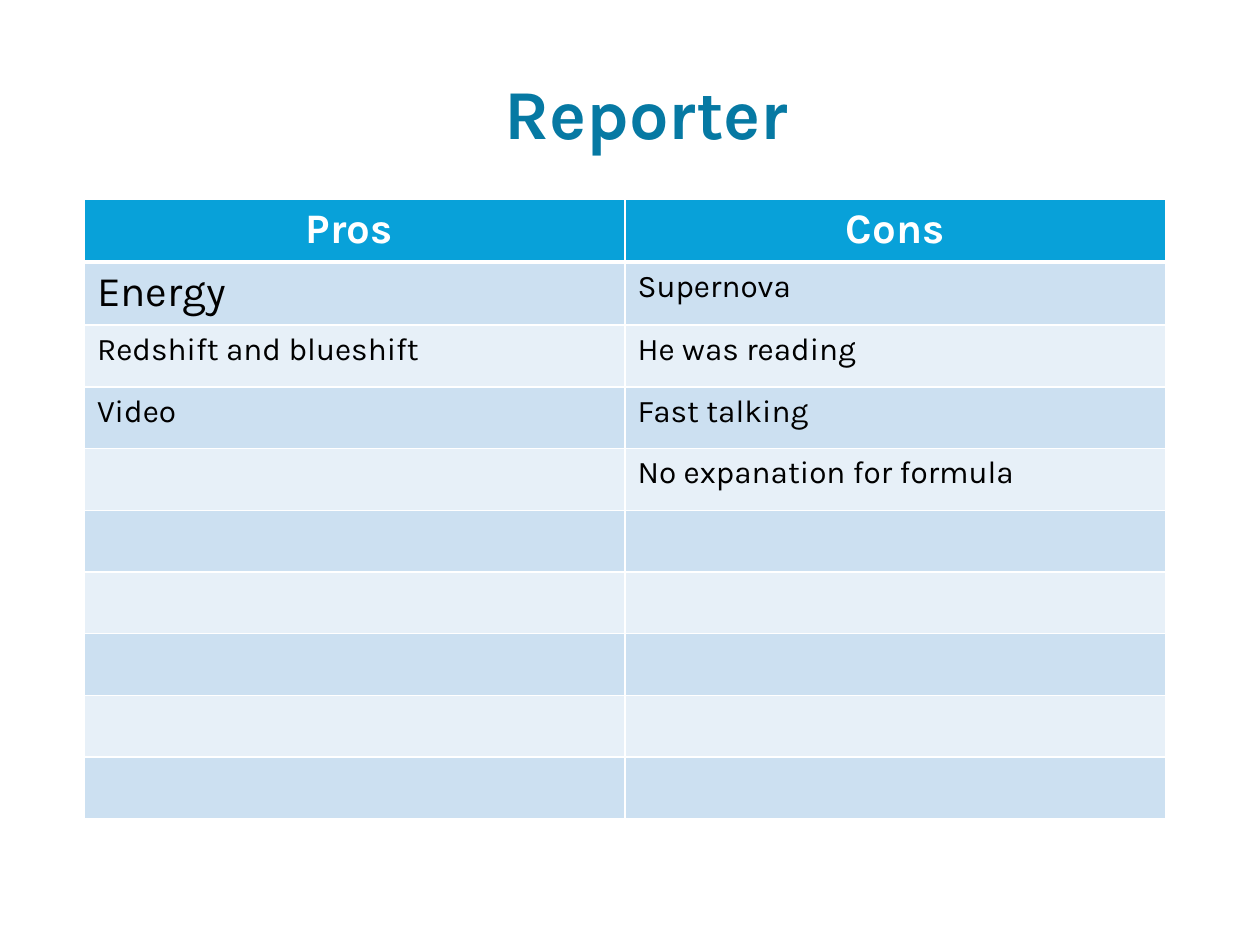
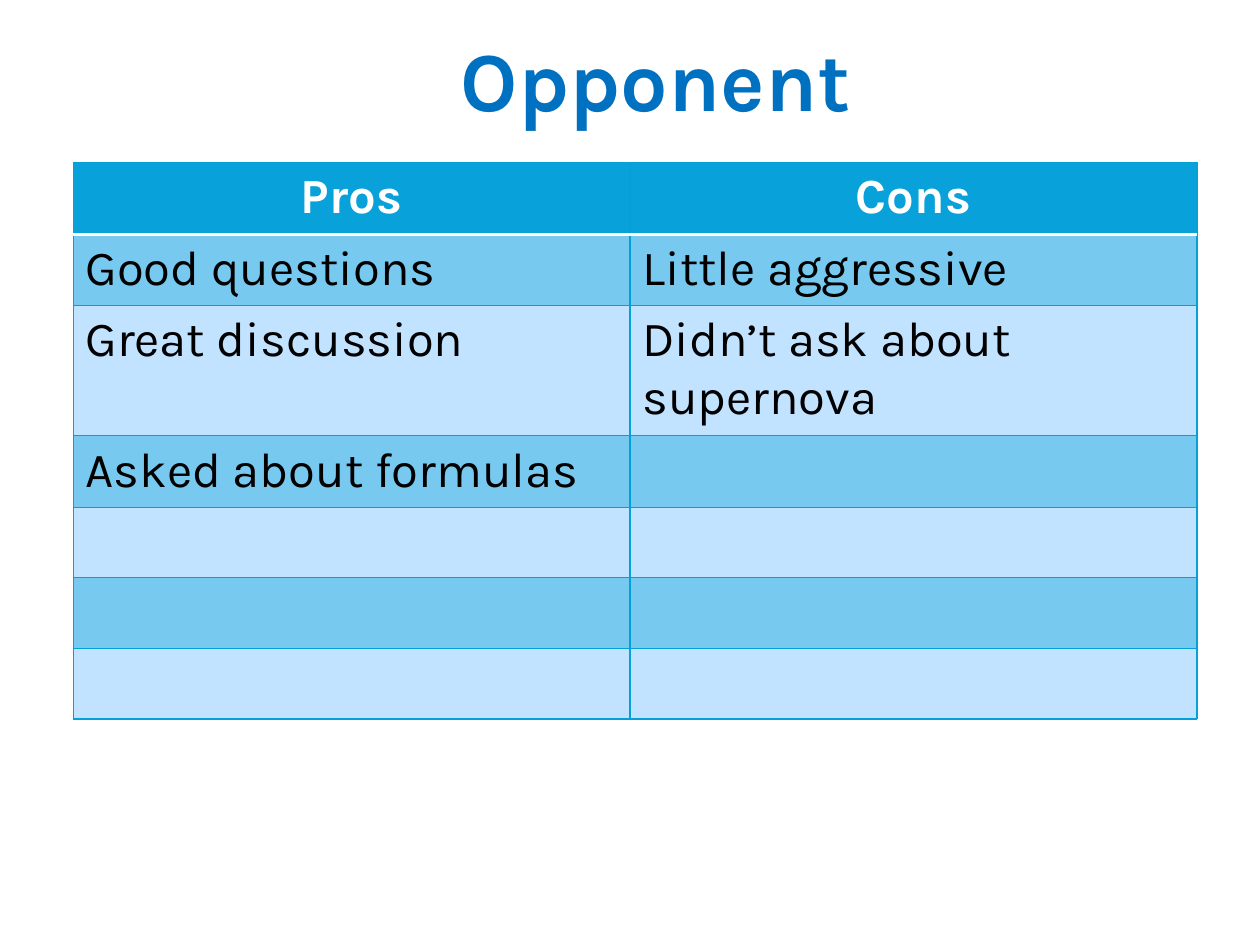
from lxml import etree
from pptx import Presentation
from pptx.dml.color import RGBColor
from pptx.enum.text import MSO_ANCHOR, PP_ALIGN
from pptx.oxml.ns import qn
from pptx.util import Inches, Pt

CENTER = PP_ALIGN.CENTER
LEFT = PP_ALIGN.LEFT
TOP = MSO_ANCHOR.TOP
FONT = "Karla"
COLORS = {
    "white": "FFFFFF", "black": "000000", "head": "08A1D9",
    "teal": "0679A3", "blue": "0070C0", "edge": "03A0D9",
    "mist": "CCE0F1", "ice": "E7F0F8",
    "sky": "78C9F0", "pale": "C1E3FF",
}


def paint(name):
    return RGBColor.from_string(COLORS[name])


def write(frame, text, size, color, bold=False, align=LEFT):
    para = frame.paragraphs[0]
    para.alignment = align
    run = para.add_run()
    run.text = text
    look = {"name": FONT, "size": Pt(size), "bold": bold}
    for key, value in look.items():
        setattr(run.font, key, value)
    run.font.color.rgb = paint(color)


def add_title(slide, text, box, size, color):
    frame = slide.shapes.add_textbox(*map(Inches, box)).text_frame
    frame.word_wrap = True
    frame.vertical_anchor = TOP
    write(frame, text, size, color, True, CENTER)


def add_edge(cell, side, color, width):
    line = etree.Element(qn(f"a:ln{side}"), w=str(Pt(width)))
    fill = etree.SubElement(line, qn("a:solidFill"))
    etree.SubElement(fill, qn("a:srgbClr"), val=COLORS[color])
    return line


def set_edges(cell, row, edge, rule):
    props = cell._tc.get_or_add_tcPr()
    sides = {"L": edge, "R": edge, "T": edge, "B": edge}
    if row == 0:
        sides["B"] = rule
    elif row == 1:
        sides["T"] = rule
    for spot, (side, style) in enumerate(sides.items()):
        props.insert(spot, add_edge(cell, side, *style))


def add_grid(slide, spot, widths, height, count, rows, size, bands, edge, rule):
    left, top = spot
    shape = slide.shapes.add_table(
        count, len(widths), Inches(left), Inches(top),
        Inches(sum(widths)), Inches(height * count))
    table = shape.table
    for col, width in zip(table.columns, widths):
        col.width = Inches(width)
    for row in table.rows:
        row.height = Inches(height)
    for r in range(count):
        for c in range(len(widths)):
            cell = table.cell(r, c)
            cell.fill.solid()
            cell.fill.fore_color.rgb = paint(bands[(r - 1) % 2] if r else "head")
            set_edges(cell, r, edge, rule)
            text, points = rows.get((r, c), ("", size))
            if not text:
                continue
            if r == 0:
                write(cell.text_frame, text, points, "white", True, CENTER)
            else:
                write(cell.text_frame, text, points, "black")


def fill_rows(pros, cons, head, size):
    rows = {}
    for c, items in enumerate((pros, cons)):
        for r, text in enumerate(items):
            rows[r, c] = (text, size if r else head)
    return rows


def main():
    deck = Presentation()
    deck.slide_width, deck.slide_height = Inches(10), Inches(7.5)
    blank = deck.slide_layouts[6]

    slide = deck.slides.add_slide(blank)
    add_title(slide, "Reporter", (1.42, 0.5, 7.42, 0.77), 40, "teal")
    rows = fill_rows(
        ["Pros ", "Energy", "Redshift and blueshift", "Video"],
        ["Cons", "Supernova", "He was reading", "Fast talking",
         "No expanation for formula"], 24, 18)
    rows[1, 0] = ("Energy", 24)
    add_grid(slide, (0.67, 1.58), (4.29, 4.29), 0.49, 10, rows, 18,
             ("mist", "ice"), ("white", 1), ("white", 3))

    slide = deck.slides.add_slide(blank)
    add_title(slide, "Opponent", (1.58, 0.17, 7.25, 1.72), 48, "blue")
    rows = fill_rows(
        ["Pros", "Good questions", "Great discussion", "Asked about formulas"],
        ["Cons", "Little aggressive", "Didn’t ask about supernova"], 28, 28)
    add_grid(slide, (0.58, 1.29), (4.42, 4.5), 0.56, 7, rows, 28,
             ("sky", "pale"), ("edge", 0.75), ("white", 2))

    deck.save("out.pptx")


if __name__ == "__main__":
    main()
